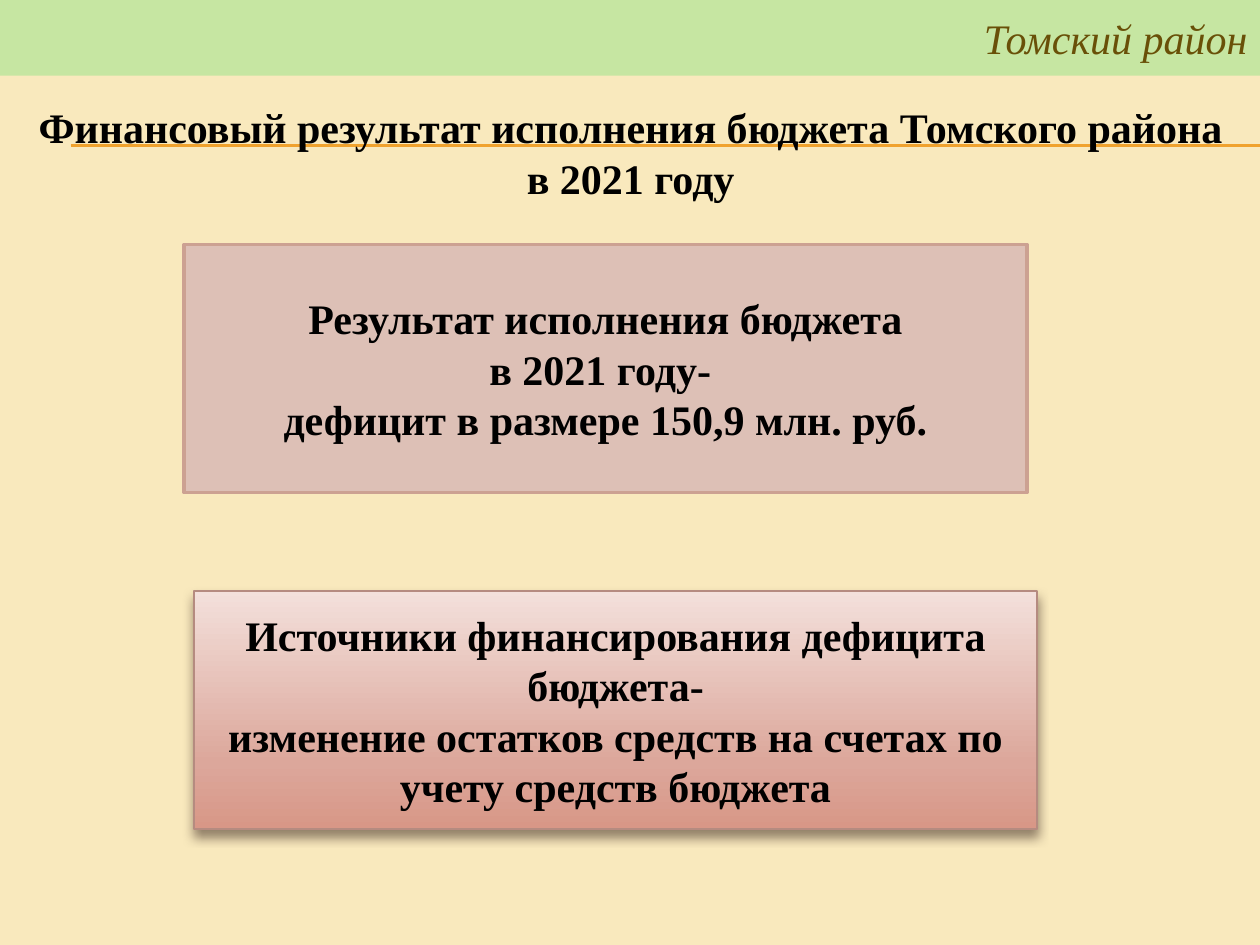
import copy

import lxml.etree
import pptx
import pptx.dml.color
import pptx.enum.shapes
import pptx.enum.text
import pptx.oxml
import pptx.oxml.ns
import pptx.util

Inches = pptx.util.Inches
Pt = pptx.util.Pt
Align = pptx.enum.text.PP_ALIGN
qn = pptx.oxml.ns.qn
rgb = pptx.dml.color.RGBColor.from_string

COLORS = {
    "back": "F9E9BD", "rule": "F0A22E", "band": "C6E6A2", "brown": "695008",
    "text": "000000", "rose": "DDC0B6", "edge": "CCA192", "rim": "B58B80",
    "pale": "F3E0DB", "mid": "DCA79B", "deep": "D89787", "shade": "4E3B30",
}


def write(shape, lines, color="text", align=Align.CENTER, bold=True):
    frame = shape.text_frame
    frame.word_wrap = True
    frame.text = "\n".join(lines)
    for para in frame.paragraphs:
        para.alignment = align
        font = para.font
        font.name, font.size = "Times New Roman", Pt(24)
        font.bold, font.italic = bold, not bold
        font.color.rgb = rgb(COLORS[color])


def add_box(left, top, width, height, fill=None, line=None, weight=0):
    """Add a rectangle without shadow; fill and line are colour names."""
    box = slide.shapes.add_shape(
        pptx.enum.shapes.MSO_SHAPE.RECTANGLE,
        Inches(left), Inches(top), Inches(width), Inches(height))
    box.shadow.inherit = False
    box.text_frame.vertical_anchor = pptx.enum.text.MSO_ANCHOR.MIDDLE
    if fill:
        box.fill.solid()
        box.fill.fore_color.rgb = rgb(COLORS[fill])
    if line:
        box.line.color.rgb = rgb(COLORS[line])
        box.line.width = Pt(weight)
    else:
        box.line.fill.background()
    return box


deck = pptx.Presentation()
deck.slide_width, deck.slide_height = Inches(10), Inches(7.5)
slide = deck.slides.add_slide(deck.slide_layouts[6])
slide.background.fill.solid()
slide.background.fill.fore_color.rgb = rgb(COLORS["back"])

# Double rule behind the heading
for y in (1.15, 1.16):
    rule = slide.shapes.add_connector(
        pptx.enum.shapes.MSO_CONNECTOR.STRAIGHT,
        Inches(0.56), Inches(y), Inches(10), Inches(y))
    rule.line.color.rgb = rgb(COLORS["rule"])
    rule.line.width = Pt(0.75)
    lxml.etree.SubElement(rule.element.spPr, qn("a:effectLst"))

# Top band and heading
band = add_box(0, 0, 10, 0.6, "band")
write(band, ["Томский район"], "brown", Align.RIGHT, bold=False)

head = slide.shapes.add_textbox(
    Inches(0.2), Inches(0.76), Inches(9.61), Inches(0.91))
write(head, ["Финансовый результат исполнения бюджета Томского района в 2021 году"])

# Result of the budget
result = add_box(1.46, 1.94, 6.69, 1.97, "rose", "edge", 2)
write(result, ["Результат исполнения бюджета", "в 2021 году- ",
               "дефицит в размере 150,9 млн. руб."])

# Sources of financing: three-stop gradient and soft shadow
source = add_box(1.54, 4.69, 6.69, 1.89, line="rim", weight=0.79)
write(source, ["Источники финансирования дефицита бюджета-",
               "изменение остатков средств на счетах по учету средств бюджета"])
source.fill.gradient()
source.fill.gradient_angle = 270
stops = source.element.spPr.find(qn("a:gradFill")).find(qn("a:gsLst"))
stops.append(copy.deepcopy(stops[0]))
shades = (("pale", 0), ("mid", 0.72), ("deep", 1))
for stop, (name, place) in zip(source.fill.gradient_stops, shades):
    stop.color.rgb = rgb(COLORS[name])
    stop.position = place

effects = source.element.spPr.find(qn("a:effectLst"))
shadow = lxml.etree.SubElement(
    effects, qn("a:outerShdw"), blurRad=str(Pt(6)), dist=str(Pt(4)),
    dir="5400000", rotWithShape="0")
shade = lxml.etree.SubElement(shadow, qn("a:srgbClr"), val=COLORS["shade"])
lxml.etree.SubElement(shade, qn("a:alpha"), val="60000")

deck.save("out.pptx")
